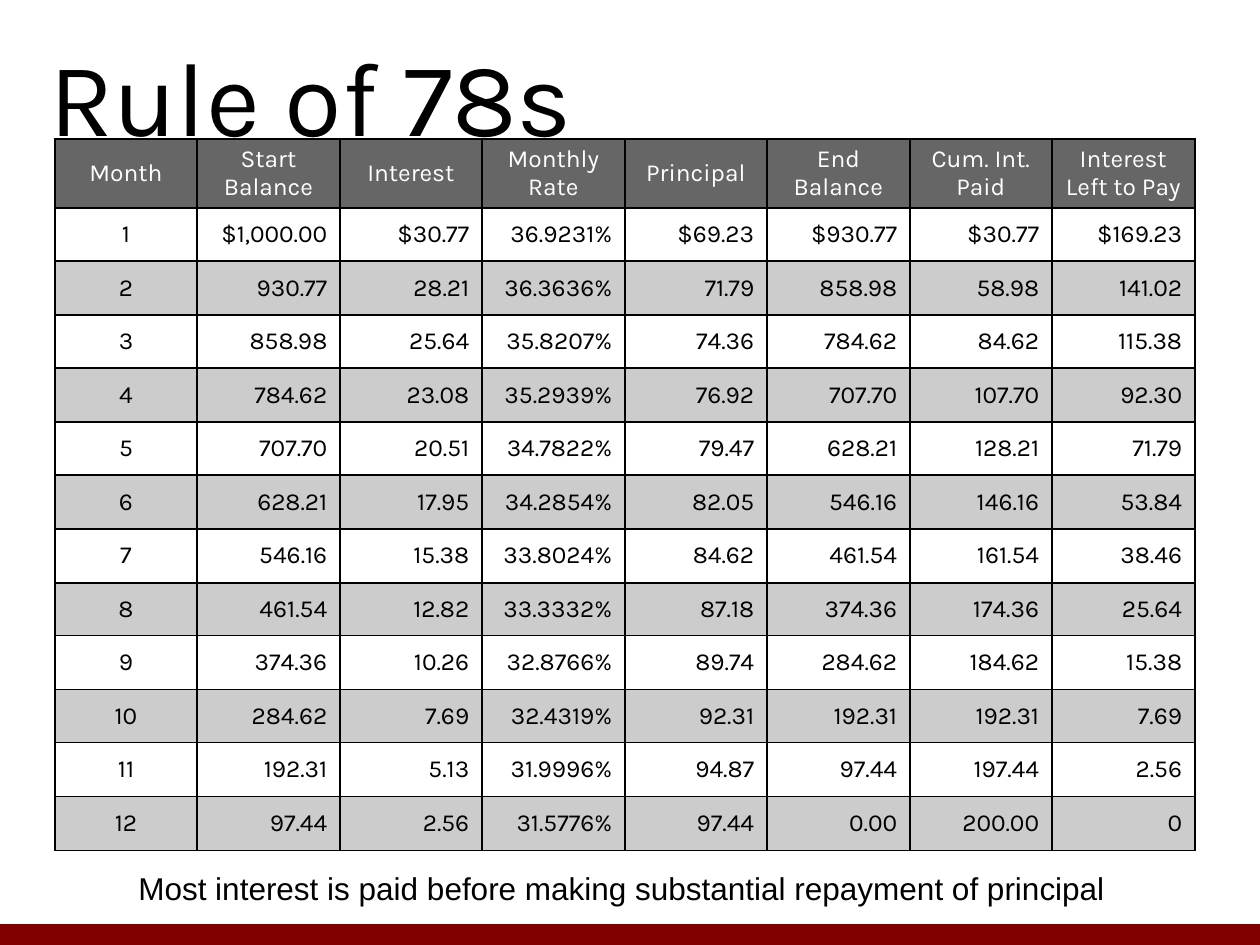
from typing import Any, NamedTuple

from lxml.etree import SubElement
from pptx import Presentation
from pptx.dml.color import RGBColor
from pptx.enum.shapes import MSO_CONNECTOR
from pptx.enum.text import MSO_ANCHOR, MSO_AUTO_SIZE, PP_ALIGN
from pptx.oxml.ns import qn
from pptx.util import Emu, Pt

PX_PER_INCH = 126
COLORS = {
    "ink": "000000",
    "header": "666666",
    "header_text": "FFFFFF",
    "odd_month": "FFFFFF",
    "even_month": "CCCCCC",
    "footer": "800000",
}
HEADINGS = [
    "Month", "Start Balance", "Interest", "Monthly Rate",
    "Principal", "End Balance", "Cum. Int. Paid", "Interest Left to Pay",
]
MONTHS = """
$1,000.00 $30.77 36.9231% $69.23 $930.77 $30.77 $169.23
930.77 28.21 36.3636% 71.79 858.98 58.98 141.02
858.98 25.64 35.8207% 74.36 784.62 84.62 115.38
784.62 23.08 35.2939% 76.92 707.70 107.70 92.30
707.70 20.51 34.7822% 79.47 628.21 128.21 71.79
628.21 17.95 34.2854% 82.05 546.16 146.16 53.84
546.16 15.38 33.8024% 84.62 461.54 161.54 38.46
461.54 12.82 33.3332% 87.18 374.36 174.36 25.64
374.36 10.26 32.8766% 89.74 284.62 184.62 15.38
284.62 7.69 32.4319% 92.31 192.31 192.31 7.69
192.31 5.13 31.9996% 94.87 97.44 197.44 2.56
97.44 2.56 31.5776% 97.44 0.00 200.00 0
"""


class Box(NamedTuple):
    left: int
    top: int
    width: int
    height: int


class TextStyle(NamedTuple):
    font: str
    size: int
    color: str
    align: PP_ALIGN = PP_ALIGN.LEFT
    line_spacing: float = 1.0


SLIDE = Box(0, 0, 1260, 945)
TITLE = Box(49, 21, 1197, 106)
SCHEDULE = Box(55, 139, 1140, 712)
CAPTION = Box(126, 863, 994, 50)
HEADER_HEIGHT = 69
FOOTER_Y = 935

TITLE_STYLE = TextStyle("Karla", 60, "ink")
CAPTION_STYLE = TextStyle("Arial", 18, "ink")
HEADER_STYLE = TextStyle("Karla", 14, "header_text", PP_ALIGN.CENTER, 0.98)
MONTH_STYLE = TextStyle("Karla", 14, "ink", PP_ALIGN.CENTER)
AMOUNT_STYLE = TextStyle("Karla", 14, "ink", PP_ALIGN.RIGHT)


def px(length: int) -> Emu:
    return Emu(round(length * 914400 / PX_PER_INCH))


def rgb(name: str) -> RGBColor:
    return RGBColor.from_string(COLORS[name])


def split_evenly(total: int, count: int) -> list[int]:
    edges = [total * i // count for i in range(count + 1)]
    return [end - start for start, end in zip(edges, edges[1:])]


def assign(target: Any, values: dict[str, Any]) -> None:
    for key, value in values.items():
        setattr(target, key, value)


def place(shape: Any, box: Box) -> None:
    assign(shape, {key: px(value) for key, value in box._asdict().items()})


def write(frame: Any, text: str, style: TextStyle) -> None:
    frame.text = text
    paragraph = frame.paragraphs[0]
    assign(paragraph, {"alignment": style.align, "line_spacing": style.line_spacing})
    font = paragraph.runs[0].font
    assign(font, {"name": style.font, "size": Pt(style.size), "bold": False})
    font.color.rgb = rgb(style.color)


def add_borders(cell: Any) -> None:
    properties = cell._tc.get_or_add_tcPr()
    for side in ("a:lnL", "a:lnR", "a:lnT", "a:lnB"):
        border = SubElement(properties, qn(side), w=str(Pt(1)))
        fill = SubElement(border, qn("a:solidFill"))
        SubElement(fill, qn("a:srgbClr"), val=COLORS["ink"])


def fill_cell(cell: Any, text: str, style: TextStyle, fill: str) -> None:
    write(cell.text_frame, text, style)
    cell.vertical_anchor = MSO_ANCHOR.MIDDLE
    add_borders(cell)
    cell.fill.solid()
    cell.fill.fore_color.rgb = rgb(fill)


def add_schedule(slide: Any) -> None:
    months = [line.split() for line in MONTHS.strip().splitlines()]
    table = slide.shapes.add_table(
        len(months) + 1, len(HEADINGS), *map(px, SCHEDULE)
    ).table
    for column, width in zip(table.columns, split_evenly(SCHEDULE.width, len(HEADINGS))):
        column.width = px(width)
    month_heights = split_evenly(SCHEDULE.height - HEADER_HEIGHT, len(months))
    for row, height in zip(table.rows, [HEADER_HEIGHT, *month_heights]):
        row.height = px(height)
    for column, heading in enumerate(HEADINGS):
        fill_cell(table.cell(0, column), heading, HEADER_STYLE, "header")
    for month, amounts in enumerate(months, start=1):
        fill = "odd_month" if month % 2 else "even_month"
        fill_cell(table.cell(month, 0), str(month), MONTH_STYLE, fill)
        for column, amount in enumerate(amounts, start=1):
            fill_cell(table.cell(month, column), amount, AMOUNT_STYLE, fill)


def add_title(slide: Any) -> None:
    title = slide.shapes.title
    place(title, TITLE)
    assign(title.text_frame, {
        "margin_left": 0, "margin_right": 0, "margin_top": px(10), "margin_bottom": 0,
        "vertical_anchor": MSO_ANCHOR.TOP, "auto_size": MSO_AUTO_SIZE.NONE,
        "word_wrap": True,
    })
    write(title.text_frame, "Rule of 78s", TITLE_STYLE)


def add_caption(slide: Any) -> None:
    caption = slide.shapes.add_textbox(*map(px, CAPTION)).text_frame
    caption.word_wrap = True
    write(
        caption,
        "Most interest is paid before making substantial repayment of principal",
        CAPTION_STYLE,
    )


def add_footer(slide: Any) -> None:
    footer = slide.shapes.add_connector(
        MSO_CONNECTOR.STRAIGHT, 0, px(FOOTER_Y), px(SLIDE.width), px(FOOTER_Y)
    )
    footer.line.color.rgb = rgb("footer")
    footer.line.width = Pt(12)
    SubElement(footer._element.spPr, qn("a:effectLst"))


def main() -> None:
    deck = Presentation()
    assign(deck, {"slide_width": px(SLIDE.width), "slide_height": px(SLIDE.height)})
    slide = deck.slides.add_slide(deck.slide_layouts[5])
    add_footer(slide)
    add_schedule(slide)
    add_title(slide)
    add_caption(slide)
    deck.save("out.pptx")


if __name__ == "__main__":
    main()
